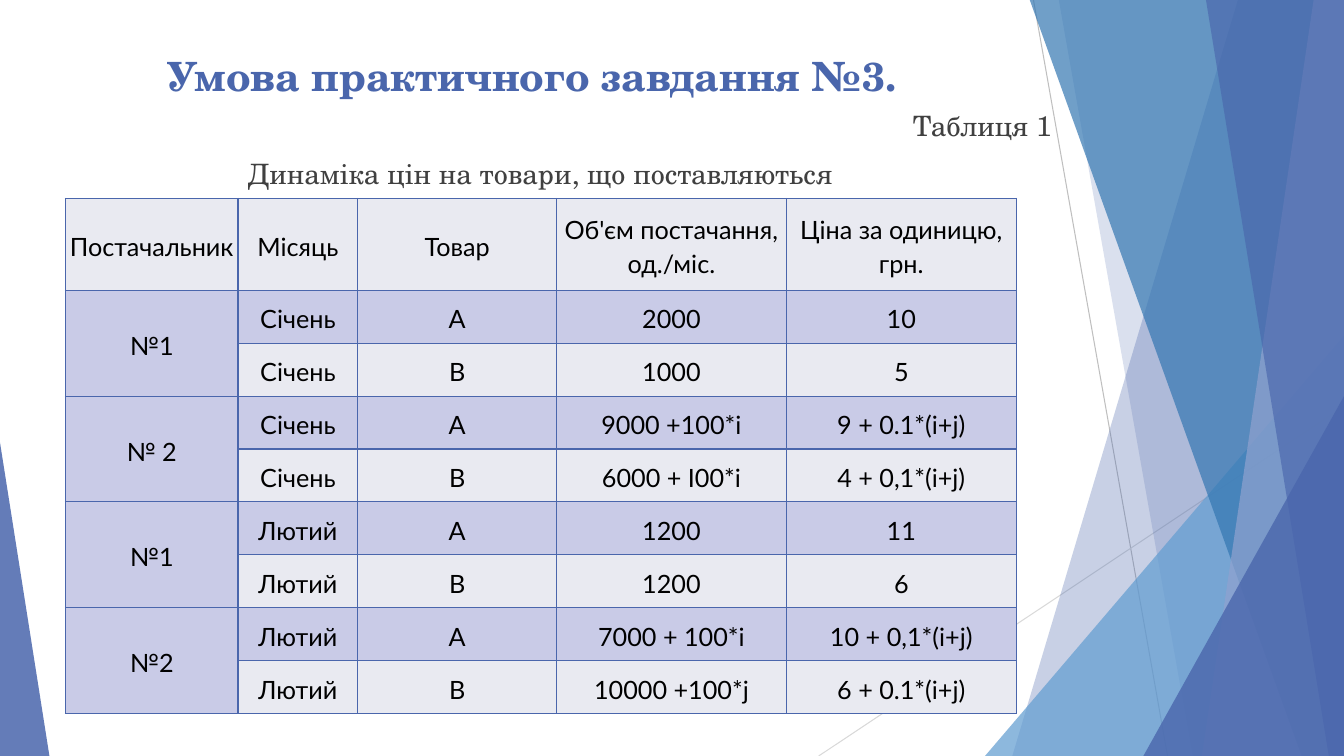
import pptx
import pptx.dml.color
import pptx.enum.shapes
import pptx.enum.text
import pptx.oxml
import pptx.oxml.ns
import pptx.util
from pptx.util import Inches

COLORS = {
    "blue": "4A66AC", "deep": "3477B2", "sky": "629DD1", "pale": "90A2CF",
    "text": "404040", "black": "000000", "header": "E9EAF1", "band": "C9CBE7",
    "line_dark": "BFBFBF", "line_light": "D9D9D9",
}
SERIF, SANS = "TeX Gyre Schola", "Lato"
WIDTH, HEIGHT = 13.33, 7.5
ALIGN = pptx.enum.text.PP_ALIGN
MIDDLE = pptx.enum.text.MSO_ANCHOR.MIDDLE

HEADINGS = ["Постачальник", "Місяць", "Товар", "Об'єм постачання,\nод./міс.",
            "Ціна за одиницю, грн."]
DELIVERIES = [
    ["№1", "Січень", "А", "2000", "10"],
    ["", "Січень", "В", "1000", "5"],
    ["№ 2", "Січень", "А", "9000 +100*і", "9 + 0.1*(і+j)"],
    ["", "Січень", "В", "6000 + І00*і", "4 + 0,1*(і+j)"],
    ["№1", "Лютий", "А", "1200", "11"],
    ["", "Лютий", "В", "1200", "6"],
    ["№2", "Лютий", "А", "7000 + 100*і", "10 + 0,1*(i+j)"],
    ["", "Лютий", "В", "10000 +100*j", "6 + 0.1*(і+j)"],
]
COLUMN_WIDTHS = [1.71, 1.19, 1.97, 2.28, 2.28]
HEADER_HEIGHT, TABLE_HEIGHT = 0.91, 5.11


def rgb(name):
    return pptx.dml.color.RGBColor.from_string(COLORS[name])


def add_xml(parent, xml, position=None):
    """Parse a fragment in the drawing namespace and put it into parent."""
    tag, rest = xml[1:].split(" ", 1)
    node = pptx.oxml.parse_xml(f"<{tag} {pptx.oxml.ns.nsdecls('a')} {rest}")
    parent.insert(len(parent) if position is None else position, node)


def paint(shape, color, opacity):
    shape.shadow.inherit = False
    shape.line.fill.background()
    shape.fill.solid()
    shape.fill.fore_color.rgb = rgb(color)
    tint = shape.element.spPr.find(".//" + pptx.oxml.ns.qn("a:srgbClr"))
    add_xml(tint, f'<a:alpha val="{opacity * 1000}"/>')


def add_hairline(page, start, end, color):
    line = page.shapes.add_connector(
        pptx.enum.shapes.MSO_CONNECTOR.STRAIGHT,
        *(Inches(value) for value in start + end))
    line.line.color.rgb = rgb(color)
    line.line.width = pptx.util.Pt(0.75)
    add_xml(line.element.spPr, "<a:effectLst />")


def add_facet(page, top_left, bottom_left, color, opacity):
    """Add a full-height panel with a slanted left edge."""
    corners = [(top_left, -0.01), (WIDTH, -0.01), (WIDTH, HEIGHT), (bottom_left, HEIGHT)]
    points = [(Inches(x), Inches(y)) for x, y in corners]
    builder = page.shapes.build_freeform(*points[0])
    builder.add_line_segments(points[1:], close=True)
    paint(builder.convert_to_shape(), color, opacity)


def add_triangle(page, left, top, width, apex, color, opacity):
    """Add a triangle that stands on the bottom edge of the slide."""
    shape = page.shapes.add_shape(
        pptx.enum.shapes.MSO_SHAPE.ISOSCELES_TRIANGLE,
        Inches(left), Inches(top), Inches(width), Inches(HEIGHT - top))
    shape.adjustments[0] = apex
    paint(shape, color, opacity)


def add_background(page):
    add_hairline(page, (10.25, 0), (11.58, HEIGHT), "line_dark")
    add_hairline(page, (WIDTH, 4.03), (8.12, HEIGHT), "line_light")
    add_facet(page, 12.28, 10.04, "blue", 30)
    add_facet(page, 10.5, 11.83, "blue", 20)
    add_triangle(page, 9.77, 3.33, 3.56, 1, "sky", 72)
    add_facet(page, 10.21, 12.91, "deep", 70)
    add_facet(page, 13.03, 11.92, "pale", 70)
    add_facet(page, 11.96, 13.18, "blue", 65)
    add_triangle(page, 11.34, 3.93, 1.99, 1, "blue", 80)
    add_triangle(page, 0, 4.39, 0.49, 0, "blue", 85)


def format_text(para, align, size, font, color, bold=False):
    para.alignment = align
    for span in para.runs:
        span.font.size = pptx.util.Pt(size)
        span.font.name = font
        span.font.bold = bold
        span.font.color.rgb = rgb(color)


def place(page, box, left, top, width, height):
    """Move a placeholder into position, in front of the background."""
    box.left, box.top = Inches(left), Inches(top)
    box.width, box.height = Inches(width), Inches(height)
    box.text_frame.auto_size = pptx.enum.text.MSO_AUTO_SIZE.NONE
    page.shapes.element.append(box.element)


def fill_title(page):
    title = page.shapes.title
    place(page, title, 1.56, 0.41, 7.62, 0.67)
    title.text_frame.text = "Умова практичного завдання №3."
    title.text_frame.vertical_anchor = MIDDLE
    format_text(title.text_frame.paragraphs[0], ALIGN.LEFT, 28.8, SERIF, "blue", True)


def fill_captions(page):
    body = page.placeholders[1]
    place(page, body, 0.19, 1.03, 10.34, 5.8)
    body.text_frame.text = "Таблиця 1\nДинаміка цін на товари, що поставляються"
    for para, align in zip(body.text_frame.paragraphs, (ALIGN.RIGHT, ALIGN.CENTER)):
        format_text(para, align, 20, SERIF, "text")
        para.space_before = pptx.util.Pt(10)
        properties = para._p.get_or_add_pPr()
        properties.set("marL", "0")
        properties.set("indent", "0")
        add_xml(properties, "<a:buNone />")


def fill_cell(cell, text, color):
    cell.text_frame.text = text
    cell.vertical_anchor = MIDDLE
    cell.margin_left = cell.margin_right = Inches(0.03)
    cell.margin_top = cell.margin_bottom = 0
    cell.fill.solid()
    cell.fill.fore_color.rgb = rgb(color)
    for para in cell.text_frame.paragraphs:
        format_text(para, ALIGN.CENTER, 18, SANS, "black")
        para.line_spacing = 1.15
    for position, side in enumerate("LRTB"):
        add_xml(cell._tc.get_or_add_tcPr(),
                f'<a:ln{side} w="12700"><a:solidFill><a:srgbClr val="{COLORS["blue"]}"/>'
                f'</a:solidFill></a:ln{side}>', position)


def add_price_table(page):
    rows = [HEADINGS] + DELIVERIES
    table = page.shapes.add_table(
        len(rows), len(HEADINGS), Inches(0.65), Inches(1.97),
        Inches(sum(COLUMN_WIDTHS)), Inches(TABLE_HEIGHT)).table
    table.first_row = table.horz_banding = False
    for column, width in zip(table.columns, COLUMN_WIDTHS):
        column.width = Inches(width)
    for number, texts in enumerate(rows):
        height = (TABLE_HEIGHT - HEADER_HEIGHT) / len(DELIVERIES) if number else HEADER_HEIGHT
        table.rows[number].height = Inches(height)
        for column, text in enumerate(texts):
            fill_cell(table.cell(number, column), text, "band" if number % 2 else "header")
    for number in range(1, len(rows), 2):
        table.cell(number, 0).merge(table.cell(number + 1, 0))


def main():
    deck = pptx.Presentation()
    deck.slide_width, deck.slide_height = Inches(WIDTH), Inches(HEIGHT)
    page = deck.slides.add_slide(deck.slide_layouts[1])
    add_background(page)
    fill_title(page)
    fill_captions(page)
    add_price_table(page)
    deck.save("out.pptx")


if __name__ == "__main__":
    main()
